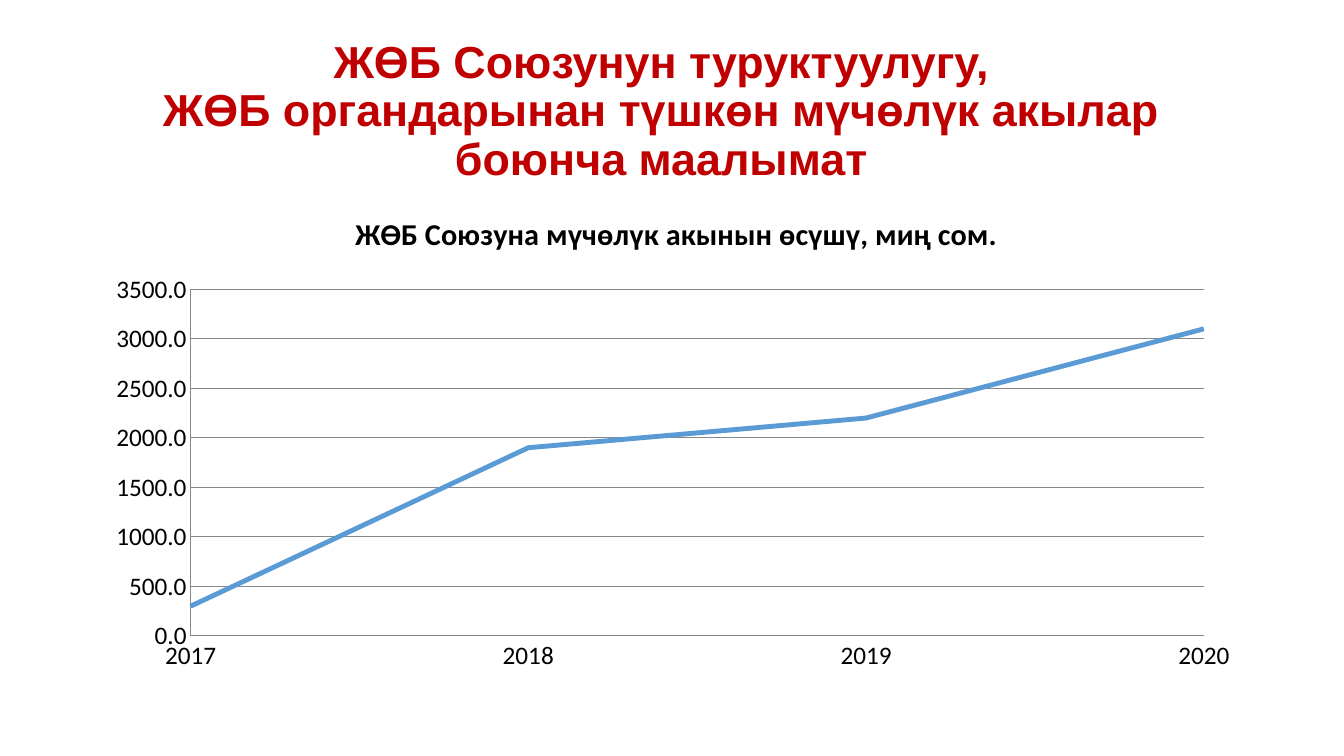
from lxml.etree import SubElement
from pptx import Presentation
from pptx.chart.data import CategoryChartData
from pptx.dml.color import RGBColor
from pptx.enum.chart import XL_CHART_TYPE, XL_TICK_MARK
from pptx.enum.text import MSO_ANCHOR, PP_ALIGN
from pptx.oxml.ns import qn
from pptx.util import Inches, Pt

HEADING = ["ЖӨБ Союзунун туруктуулугу,",
           "ЖӨБ органдарынан түшкөн мүчөлүк акылар боюнча маалымат"]
CHART_TITLE = "ЖӨБ Союзуна мүчөлүк акынын өсүшү, миң сом."
FEES = {"2017": 300, "2018": 1900, "2019": 2200, "2020": 3100}
CHART_WIDTH, CHART_HEIGHT = 11.5, 4.76
PLOT_PLACE = {"x": 0.97, "y": 0.87, "w": 10.05, "h": 3.44}
TITLE_PLACE = {"x": 2.55, "y": 0.05}
RED, BLACK, GREY, BLUE = "C00000", "000000", "878787", "5B9BD5"


def style_font(font, name, size, color, bold):
    font.name, font.size, font.bold = name, Pt(size), bold
    font.color.rgb = RGBColor.from_string(color)


def style_line(line, color, width):
    line.color.rgb = RGBColor.from_string(color)
    line.width = Pt(width)


def add_heading(page):
    box = page.shapes.add_textbox(Inches(0.81), Inches(0.39), Inches(11.5), Inches(1.45))
    frame = box.text_frame
    frame.word_wrap = True
    frame.vertical_anchor = MSO_ANCHOR.MIDDLE
    para = frame.paragraphs[0]
    para.alignment, para.line_spacing = PP_ALIGN.CENTER, 0.9
    for index, text in enumerate(HEADING):
        if index:
            para.add_line_break()
        span = para.add_run()
        span.text = text
        style_font(span.font, "Arial", 32, RED, True)


def place_part(part, position, place, target=None):
    """Place a chart part by inches measured from the chart's corner."""
    layout = part.find(qn("c:layout"))
    if layout is None:
        layout = SubElement(part, qn("c:layout"))
        part.insert(position, layout)
    manual = SubElement(layout, qn("c:manualLayout"))
    settings = {"layoutTarget": target} if target else {}
    settings.update(xMode="edge", yMode="edge")
    for tag, length in place.items():
        settings[tag] = length / (CHART_WIDTH if tag in "xw" else CHART_HEIGHT)
    for tag, value in settings.items():
        SubElement(manual, qn(f"c:{tag}")).set("val", str(value))


def start_on_axis(value_axis):
    cross = value_axis.find(qn("c:crossBetween"))
    if cross is None:
        cross = SubElement(value_axis, qn("c:crossBetween"))
        value_axis.find(qn("c:crosses")).addnext(cross)
    cross.set("val", "midCat")


def add_fee_chart(page):
    data = CategoryChartData()
    data.categories = list(FEES)
    data.add_series("Series 1", list(FEES.values()))
    chart = page.shapes.add_chart(XL_CHART_TYPE.LINE, Inches(0.92), Inches(2),
                                  Inches(CHART_WIDTH), Inches(CHART_HEIGHT), data).chart
    style_font(chart.font, "Calibri", 18, BLACK, False)
    chart.has_legend = False
    chart.has_title = True
    span = chart.chart_title.text_frame.paragraphs[0].add_run()
    span.text = CHART_TITLE
    style_font(span.font, "Calibri", 21.6, BLACK, True)
    chart.chart_title.include_in_layout = False
    for axis, number_format in ((chart.category_axis, "General"), (chart.value_axis, "0.0")):
        axis.major_tick_mark = axis.minor_tick_mark = XL_TICK_MARK.NONE
        axis.tick_labels.number_format = number_format
        axis.tick_labels.number_format_is_linked = False
        style_line(axis.format.line, GREY, 0.75)
    values = chart.value_axis
    values.minimum_scale, values.maximum_scale, values.major_unit = 0, 3500, 500
    values.has_major_gridlines = True
    style_line(values.major_gridlines.format.line, GREY, 0.75)
    start_on_axis(values._element)
    plot = chart.plots[0]
    plot.vary_by_categories = False
    series = plot.series[0]
    series.smooth = False
    style_line(series.format.line, BLUE, 3.5)
    place_part(plot._element.getparent(), 0, PLOT_PLACE, "inner")
    place_part(chart.chart_title._element, 1, TITLE_PLACE)


def main():
    deck = Presentation()
    deck.slide_width, deck.slide_height = Inches(13.33), Inches(7.5)
    page = deck.slides.add_slide(deck.slide_layouts[6])
    add_heading(page)
    add_fee_chart(page)
    deck.save("out.pptx")


if __name__ == "__main__":
    main()
